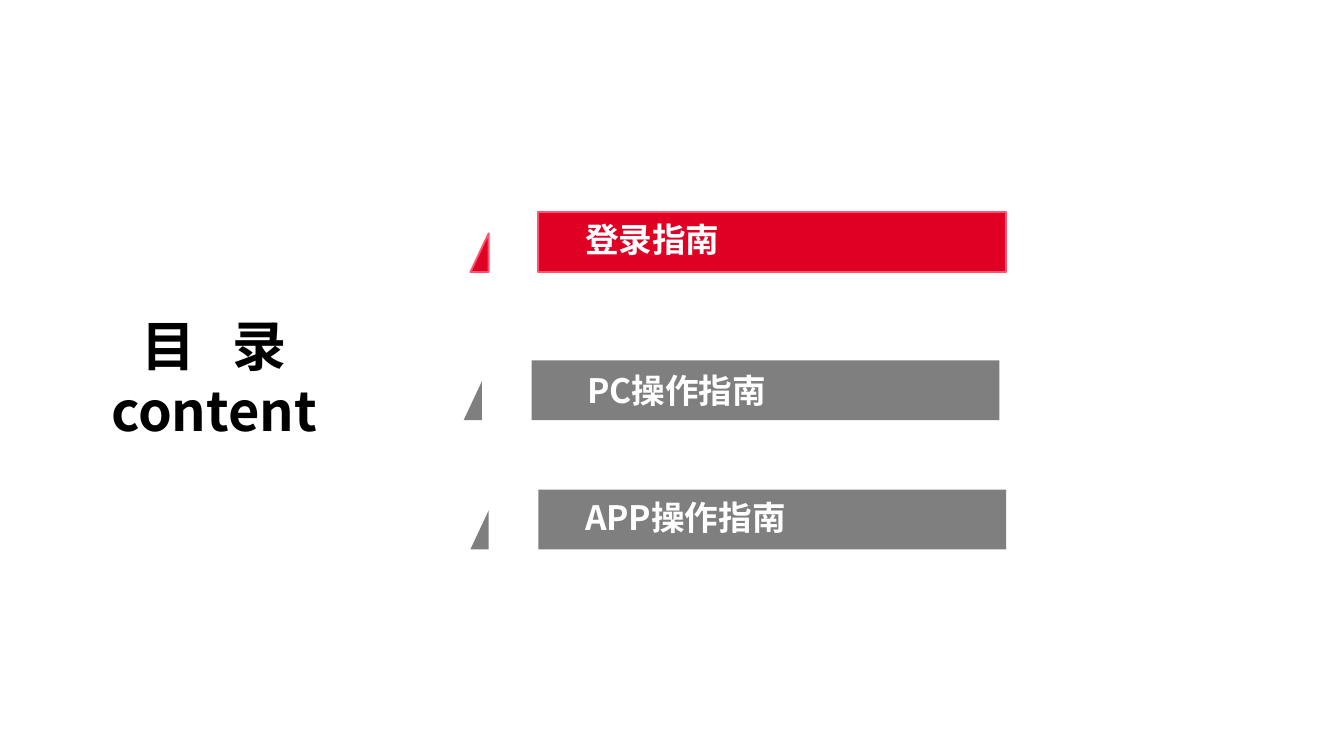
import pptx
import pptx.dml.color
import pptx.enum.text
import pptx.oxml.ns
import pptx.util
from lxml import etree

Pt = pptx.util.Pt
ANCHOR = pptx.enum.text.MSO_ANCHOR
ALIGN = pptx.enum.text.PP_ALIGN

COLORS = {"red": "DF0024", "pink": "FF536F", "gray": "7F7F7F", "white": "FFFFFF", "black": "000000"}
FONT = "Noto Sans CJK SC"
HEADING = [["目 ", "录"], ["content"]]
HEADING_GAP = 6.5
ENTRIES = [
    {"text": "登录指南", "left": 252, "top": 113.75, "fill": "red", "line": "pink", "own_box": False},
    {"text": "PC操作指南", "left": 248.4, "top": 193, "fill": "gray", "line": None, "own_box": True},
    {"text": "APP操作指南", "left": 252, "top": 262.3, "fill": "gray", "line": None, "own_box": False},
]
TRIANGLE_WIDTH, TRIANGLE_HEIGHT = 9.8, 20.8
BAR_OFFSET, BAR_WIDTH, BAR_HEIGHT = 36.4, 250.6, 32
LABEL_INDENT = 61.4
LABEL_LIFT = 3


def color(name):
    return pptx.dml.color.RGBColor.from_string(COLORS[name])


def prepare_frame(shape, left=0, bottom=0):
    frame = shape.text_frame
    frame.word_wrap = True
    frame.vertical_anchor = ANCHOR.MIDDLE
    frame.margin_top = frame.margin_right = 0
    frame.margin_left, frame.margin_bottom = Pt(left), Pt(bottom)
    return frame


def style_paragraph(paragraph, size, color_name, alignment):
    paragraph.alignment = alignment
    font = paragraph.font
    font.size, font.bold, font.name = Pt(size), True, FONT
    font.color.rgb = color(color_name)
    east_asian = etree.SubElement(font._element, pptx.oxml.ns.qn("a:ea"))
    east_asian.set("typeface", FONT)


def add_marker_and_bar(shapes, entry):
    left, top = entry["left"], entry["top"]
    bottom = top + BAR_HEIGHT
    right = left + TRIANGLE_WIDTH
    bar_left = left + BAR_OFFSET
    bar_right = bar_left + BAR_WIDTH
    builder = shapes.build_freeform(Pt(right), Pt(bottom - TRIANGLE_HEIGHT))
    builder.add_line_segments([(Pt(right), Pt(bottom)), (Pt(left), Pt(bottom))])
    builder.move_to(Pt(bar_left), Pt(top))
    corners = [(bar_right, top), (bar_right, bottom), (bar_left, bottom)]
    builder.add_line_segments([(Pt(x), Pt(y)) for x, y in corners])
    shape = builder.convert_to_shape()
    shape.shadow.inherit = False
    shape.fill.solid()
    shape.fill.fore_color.rgb = color(entry["fill"])
    if entry["line"]:
        shape.line.color.rgb = color(entry["line"])
        shape.line.width = Pt(1)
    else:
        shape.line.fill.background()
    return shape


def add_entry(shapes, entry):
    bar = add_marker_and_bar(shapes, entry)
    if entry["own_box"]:
        box = shapes.add_textbox(Pt(314.6), Pt(entry["top"] + 5), Pt(155), Pt(22))
        frame = prepare_frame(box)
    else:
        frame = prepare_frame(bar, LABEL_INDENT, LABEL_LIFT)
    paragraph = frame.paragraphs[0]
    paragraph.add_run().text = entry["text"]
    style_paragraph(paragraph, 18, "white", ALIGN.LEFT)


def add_heading(shapes):
    frame = prepare_frame(shapes.add_textbox(Pt(41.8), Pt(164.2), Pt(146), Pt(76.3)))
    for index, parts in enumerate(HEADING):
        paragraph = frame.add_paragraph() if index else frame.paragraphs[0]
        for part in parts:
            run = paragraph.add_run()
            run.text = part
            if part.endswith(" "):
                run.font._element.set("spc", str(int(HEADING_GAP * 100)))
        style_paragraph(paragraph, 29, "black", ALIGN.CENTER)


presentation = pptx.Presentation()
presentation.slide_width, presentation.slide_height = Pt(720), Pt(405)
slide = presentation.slides.add_slide(presentation.slide_layouts[6])
add_heading(slide.shapes)
for entry in ENTRIES:
    add_entry(slide.shapes, entry)
presentation.save("out.pptx")
